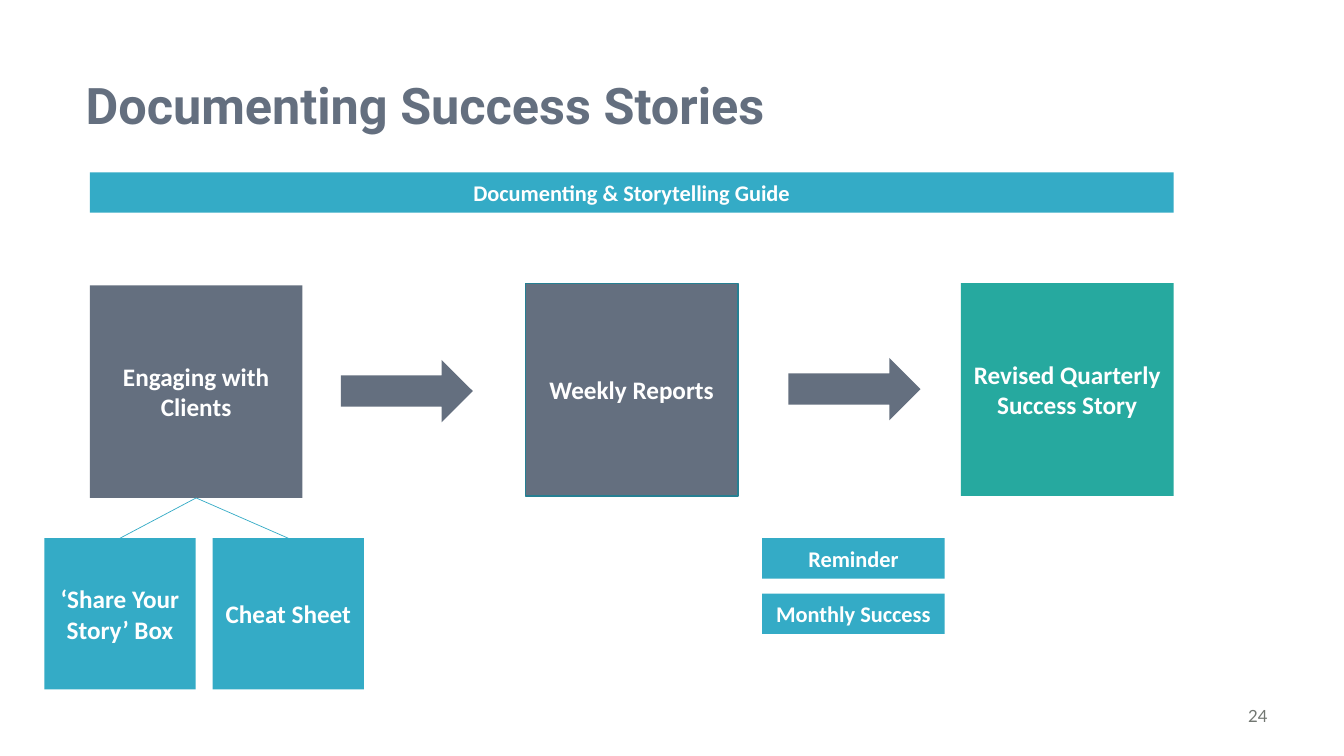
import pptx
import pptx.util
import pptx.dml.color
import pptx.enum.shapes
import pptx.enum.text
import pptx.oxml.ns
import lxml.etree

Inches = pptx.util.Inches
Pt = pptx.util.Pt
SHAPES = pptx.enum.shapes.MSO_SHAPE
ALIGN = pptx.enum.text.PP_ALIGN
ANCHOR = pptx.enum.text.MSO_ANCHOR

SLATE = "646F7F"
BLUE = "34ABC6"
GREEN = "26A99F"


def color(hex_string):
    return pptx.dml.color.RGBColor.from_string(hex_string)


def write(shape, text, size, font, hex_string, bold, alignment, anchor):
    frame = shape.text_frame
    frame.word_wrap = True
    frame.vertical_anchor = anchor
    frame.text = text
    paragraph = frame.paragraphs[0]
    paragraph.alignment = alignment
    run_font = paragraph.runs[0].font
    run_font.size = Pt(size)
    run_font.name = font
    run_font.bold = bold
    run_font.color.rgb = color(hex_string)


presentation = pptx.Presentation()
presentation.slide_width = Inches(13.33)
presentation.slide_height = Inches(7.5)
slide = presentation.slides.add_slide(presentation.slide_layouts[6])

number = slide.shapes.add_textbox(Inches(9.26), Inches(6.95), Inches(3.41), Inches(0.3))
write(number, "24", 12, "Lato", "727772", False, ALIGN.RIGHT, ANCHOR.TOP)

title = slide.shapes.add_textbox(Inches(0.75), Inches(0.66), Inches(12.58), Inches(0.75))
write(title, "Documenting Success Stories", 36, "Roboto", SLATE, True, ALIGN.LEFT, ANCHOR.MIDDLE)

boxes = [
    ("Documenting & Storytelling Guide", 0.89, 1.71, 10.75, 0.4, BLUE, 16),
    ("Engaging with Clients", 0.89, 2.83, 2.11, 2.11, SLATE, 18),
    ("Weekly Reports", 5.21, 2.81, 2.11, 2.11, SLATE, 18),
    ("Revised Quarterly Success Story", 9.53, 2.81, 2.11, 2.11, GREEN, 18),
    ("‘Share Your Story’ Box", 0.44, 5.34, 1.5, 1.5, BLUE, 18),
    ("Cheat Sheet", 2.11, 5.34, 1.5, 1.5, BLUE, 18),
    ("Reminder", 7.56, 5.34, 1.81, 0.4, BLUE, 16),
    ("Monthly Success", 7.56, 5.89, 1.81, 0.4, BLUE, 16),
]
box_shapes = {}
for text, left, top, width, height, fill, size in boxes:
    box = slide.shapes.add_shape(
        SHAPES.RECTANGLE, Inches(left), Inches(top), Inches(width), Inches(height)
    )
    box.shadow.inherit = False
    box.fill.solid()
    box.fill.fore_color.rgb = color(fill)
    box.line.fill.background()
    write(box, text, size, "Calibri", "FFFFFF", True, ALIGN.CENTER, ANCHOR.MIDDLE)
    box_shapes[text] = box

weekly_outline = box_shapes["Weekly Reports"].line
weekly_outline.color.rgb = color("267F92")
weekly_outline.width = Pt(1)

for left, top in [(3.38, 3.57), (7.82, 3.55)]:
    arrow = slide.shapes.add_shape(
        SHAPES.RIGHT_ARROW, Inches(left), Inches(top), Inches(1.31), Inches(0.62)
    )
    arrow.shadow.inherit = False
    arrow.fill.solid()
    arrow.fill.fore_color.rgb = color(SLATE)
    arrow.line.fill.background()

for tool in ["‘Share Your Story’ Box", "Cheat Sheet"]:
    connector = slide.shapes.add_connector(
        pptx.enum.shapes.MSO_CONNECTOR.STRAIGHT, Inches(0), Inches(0), Inches(1), Inches(1)
    )
    connector.begin_connect(box_shapes[tool], 0)
    connector.end_connect(box_shapes["Engaging with Clients"], 2)
    connector.line.color.rgb = color(BLUE)
    connector.line.width = Pt(0.5)
    lxml.etree.SubElement(connector._element.spPr, pptx.oxml.ns.qn("a:effectLst"))

presentation.save("out.pptx")
